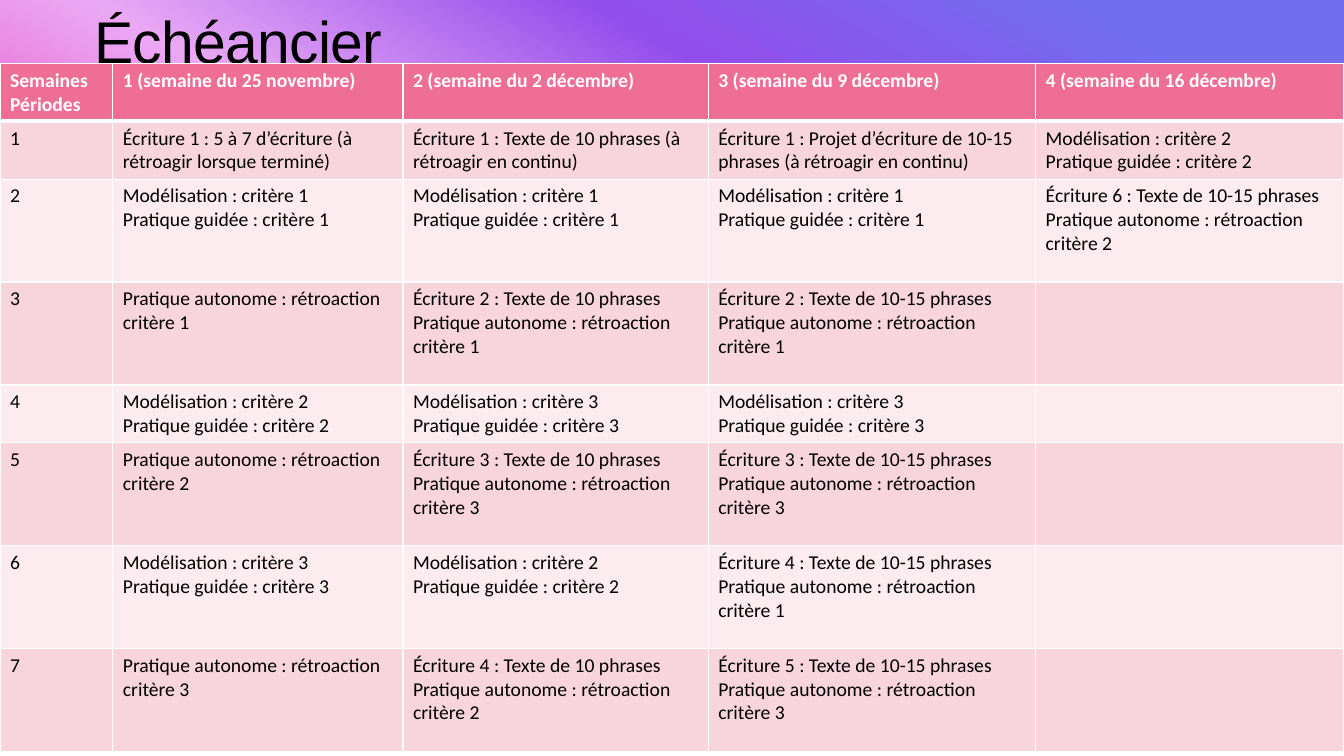
import dataclasses

import lxml.etree
import pptx
import pptx.dml.color
import pptx.enum.text
import pptx.oxml.ns
import pptx.util


@dataclasses.dataclass(frozen=True)
class Theme:
    """Hold the colours, fonts and type sizes of the slide."""
    header: str = "EE6E96"
    bands: tuple = ("FCEBEF", "F8D5DD")
    light: str = "FFFFFF"
    dark: str = "000000"
    gradient: tuple = ((10, "716EEE"), (30, "924EEB"), (50, "EAA8F5"), (70, "EB4EC0"), (90, "EE6E96"))
    title_font: str = "Arial"
    body_font: str = "Calibri"
    title_size: int = 42
    body_size: int = 14


THEME = Theme()
COLUMN_WEIGHTS = (1.12, 2.88, 3.03, 3.25, 3.06)
SHORT_ROW, TALL_ROW = 0.57, 1.02
ROW_WEIGHTS = (SHORT_ROW, SHORT_ROW, TALL_ROW, TALL_ROW, SHORT_ROW, TALL_ROW, TALL_ROW, TALL_ROW)


def guided(criterion):
    """Return the text of a modelling and guided practice period."""
    return f"Modélisation : critère {criterion}\nPratique guidée : critère {criterion}"


def autonomous(criterion):
    """Return the text of an autonomous practice period."""
    return f"Pratique autonome : rétroaction critère {criterion}"


def writing(number, length, criterion):
    """Return the text of a writing task followed by autonomous practice."""
    return f"Écriture {number} : Texte de {length} phrases\n{autonomous(criterion)}"


HEADINGS = (
    "Semaines\nPériodes",
    "1 (semaine du 25 novembre)",
    "2 (semaine du 2 décembre)",
    "3 (semaine du 9 décembre)",
    "4 (semaine du 16 décembre)",
)
PERIODS = (
    (
        "Écriture 1 : 5 à 7 d’écriture (à rétroagir lorsque terminé)",
        "Écriture 1 : Texte de 10 phrases (à rétroagir en continu)",
        "Écriture 1 : Projet d’écriture de 10-15 phrases (à rétroagir en continu)",
        guided(2),
    ),
    (guided(1), guided(1), guided(1), writing(6, "10-15", 2)),
    (autonomous(1), writing(2, "10", 1), writing(2, "10-15", 1), ""),
    (guided(2), guided(3), guided(3), ""),
    (autonomous(2), writing(3, "10", 3), writing(3, "10-15", 3), ""),
    (guided(3), guided(2), writing(4, "10-15", 1), ""),
    (autonomous(3), writing(4, "10", 2), writing(5, "10-15", 3), ""),
)


def rgb(value):
    """Convert a hexadecimal string to a colour."""
    return pptx.dml.color.RGBColor.from_string(value)


def format_font(font, color, **values):
    """Apply a colour and a dict of format values to a font."""
    font.color.rgb = rgb(color)
    for name, value in values.items():
        setattr(font, name, value)


def add_node(parent, tag, **attributes):
    """Append a DrawingML element to a parent."""
    return lxml.etree.SubElement(parent, pptx.oxml.ns.qn(tag), attributes)


def add_frame(slide, box):
    """Draw the gradient frame, open at the bottom, behind everything else."""
    left, top, width, height = box
    band = round(width / 16)
    right, bottom = left + width, top + height
    outline = slide.shapes.build_freeform(left, top)
    outline.add_line_segments([
        (right, top), (right, bottom), (right - band, bottom), (right - band, top + band),
        (left + band, top + band), (left + band, bottom), (left, bottom),
    ])
    frame = outline.convert_to_shape()
    frame.shadow.inherit = False
    frame.line.fill.background()
    frame.fill.gradient()
    frame.fill.gradient_angle = 240
    stops = frame._element.spPr.find(".//" + pptx.oxml.ns.qn("a:gsLst"))
    for stop in list(stops):
        stops.remove(stop)
    for percent, color in THEME.gradient:
        stop = add_node(stops, "a:gs", pos=str(percent * 1000))
        add_node(stop, "a:srgbClr", val=color)
    slide.shapes._spTree.insert(2, frame._element)


def add_title(slide, box, text):
    """Place and format the title placeholder."""
    title = slide.shapes.title
    title.left, title.top, title.width, title.height = box
    title.text_frame.text = text
    title.text_frame.vertical_anchor = pptx.enum.text.MSO_ANCHOR.MIDDLE
    paragraph = title.text_frame.paragraphs[0]
    paragraph.alignment = pptx.enum.text.PP_ALIGN.LEFT
    paragraph.line_spacing = 0.95
    font = paragraph.runs[0].font
    format_font(font, THEME.dark, name=THEME.title_font, size=pptx.util.Pt(THEME.title_size))
    font._element.set("spc", "-50")


def set_borders(cell, top, bottom):
    """Give a cell light borders with the given top and bottom widths in points."""
    properties = cell._tc.get_or_add_tcPr()
    widths = {"a:lnL": 1, "a:lnR": 1, "a:lnT": top, "a:lnB": bottom}
    for position, (tag, width) in enumerate(widths.items()):
        line = add_node(properties, tag, w=str(pptx.util.Pt(width)))
        add_node(add_node(line, "a:solidFill"), "a:srgbClr", val=THEME.light)
        properties.insert(position, line)


def fill_cell(cell, text, row):
    """Write and format one cell according to its row."""
    is_header = row == 0
    cell.fill.solid()
    cell.fill.fore_color.rgb = rgb(THEME.header if is_header else THEME.bands[row % 2])
    set_borders(cell, top=3 if row == 1 else 1, bottom=3 if is_header else 1)
    cell.text = text
    for paragraph in cell.text_frame.paragraphs:
        format_font(
            paragraph.font,
            THEME.light if is_header else THEME.dark,
            name=THEME.body_font,
            size=pptx.util.Pt(THEME.body_size),
            bold=is_header,
        )


def add_schedule(slide, box):
    """Add the table of weeks and periods, sharing out the box by weight."""
    rows = [HEADINGS] + [(str(number), *cells) for number, cells in enumerate(PERIODS, 1)]
    table = slide.shapes.add_table(len(rows), len(HEADINGS), *box).table
    table.horz_banding = False
    for column, weight in zip(table.columns, COLUMN_WEIGHTS):
        column.width = round(box[2] * weight / sum(COLUMN_WEIGHTS))
    for table_row, weight in zip(table.rows, ROW_WEIGHTS):
        table_row.height = round(box[3] * weight / sum(ROW_WEIGHTS))
    for row, texts in enumerate(rows):
        for column, text in enumerate(texts):
            fill_cell(table.cell(row, column), text, row)


def main():
    """Build the schedule slide and save it."""
    presentation = pptx.Presentation()
    presentation.slide_width = pptx.util.Inches(13.33)
    presentation.slide_height = pptx.util.Inches(7.5)
    slide = presentation.slides.add_slide(presentation.slide_layouts[5])

    def area(left, top, width, height):
        """Turn shares of the slide's size into a box."""
        across, down = presentation.slide_width, presentation.slide_height
        return round(left * across), round(top * down), round(width * across), round(height * down)

    add_frame(slide, area(0, 0, 1, 0.89))
    add_title(slide, area(1 / 16, 0, 0.75, 0.115), "Échéancier")
    add_schedule(slide, area(0, 0.084, 1, 0.909))
    presentation.save("out.pptx")


if __name__ == "__main__":
    main()
